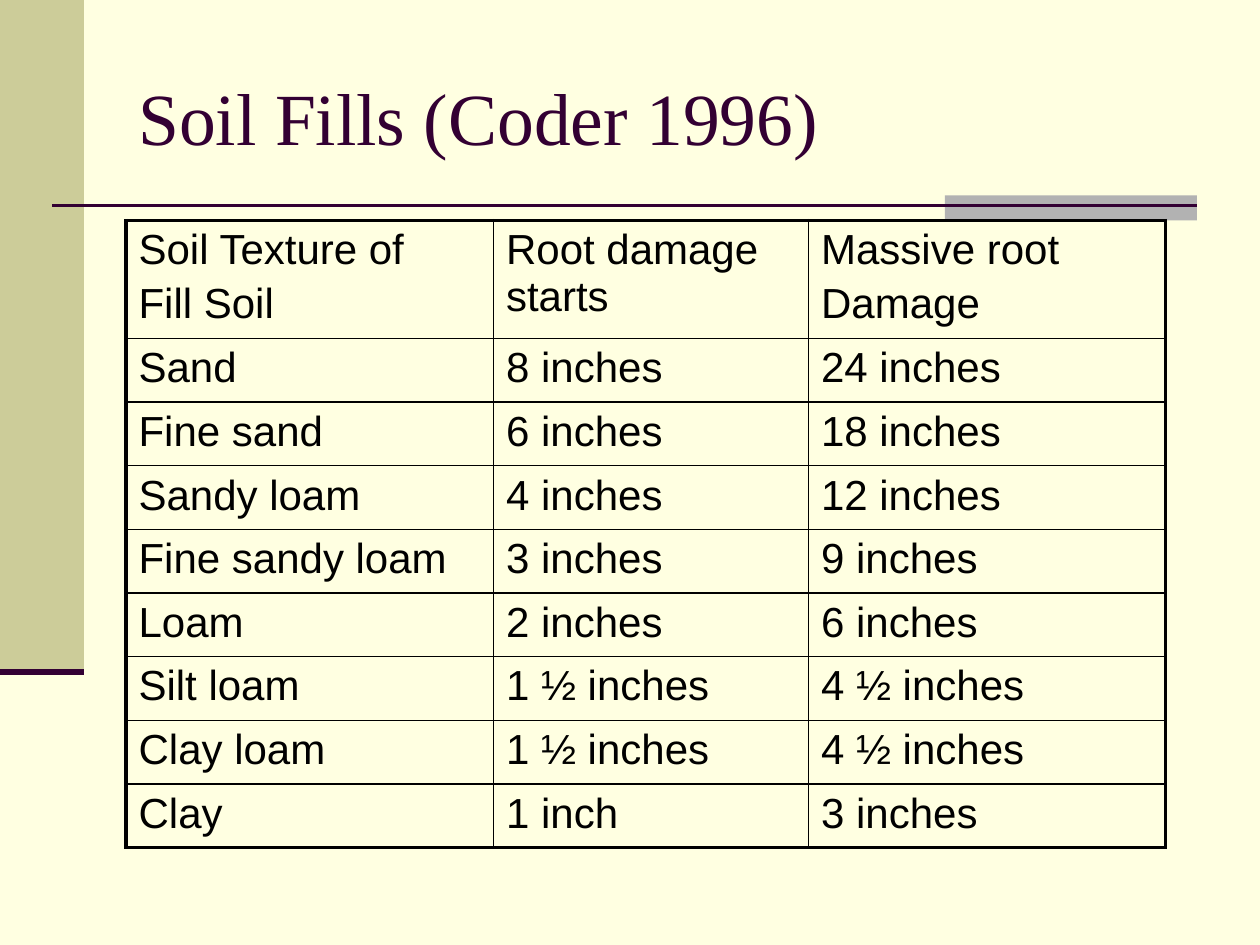
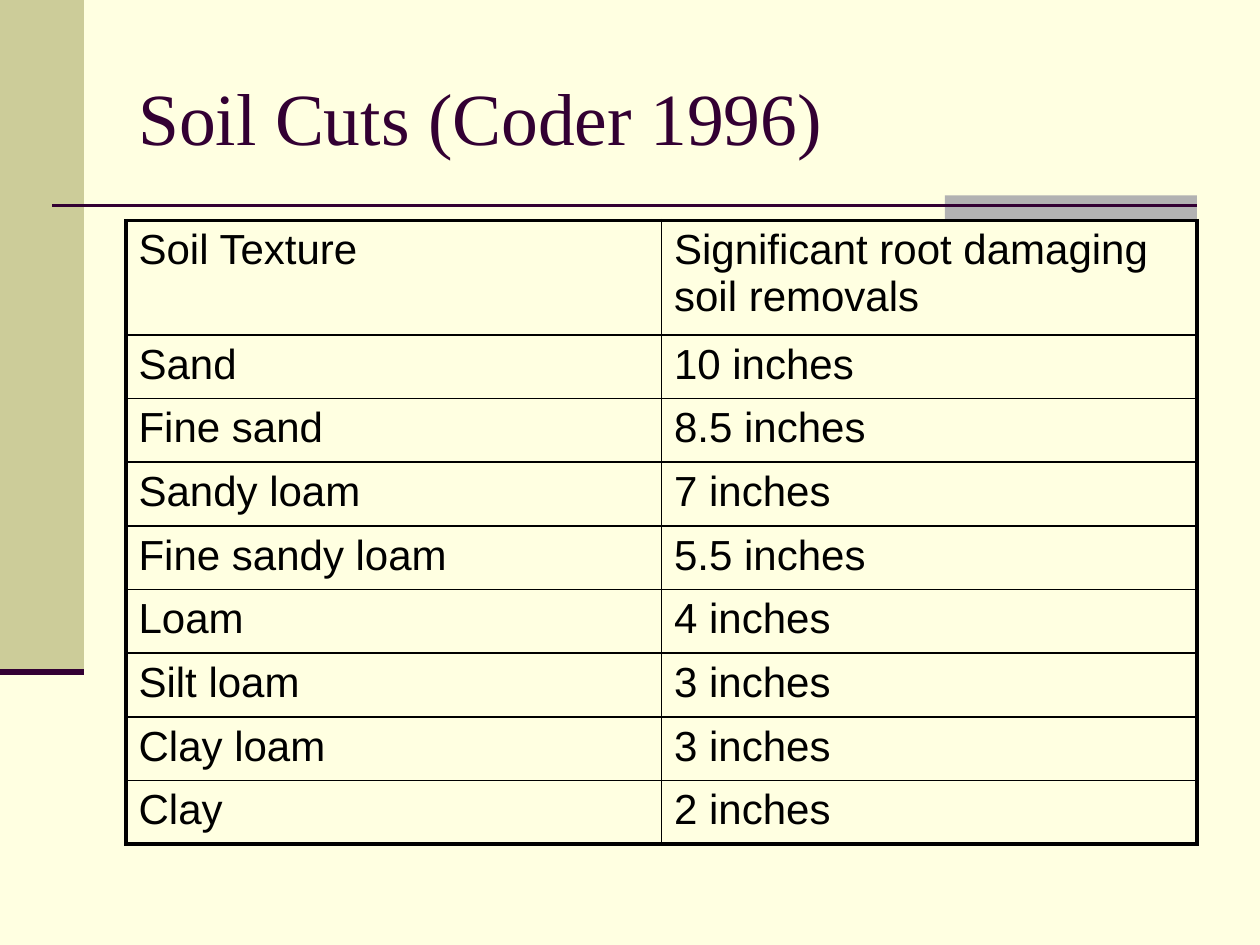
import dataclasses

import lxml.etree
import pptx
import pptx.dml.color
import pptx.enum.shapes
import pptx.enum.text
import pptx.oxml.ns
import pptx.util

COLUMNS, ROWS = 120, 90  # grid over the whole slide
UNIT = pptx.util.Inches(10) // COLUMNS


@dataclasses.dataclass(frozen=True)
class Theme:
    paper: str = "FFFFE1"
    band: str = "CCCC99"
    accent: str = "B2B2B2"
    plum: str = "330033"
    ink: str = "000000"
    title_font: str = "Times New Roman"
    title_size: float = 42
    table_font: str = "Arial"
    table_size: float = 24
    paragraph_gap: float = 4
    rule_width: float = 1.5
    band_foot_width: float = 3.5
    frame_width: float = 2.25
    grid_width: float = 1


@dataclasses.dataclass(frozen=True)
class Box:
    left: float
    top: float
    width: float
    height: float

    def emu(self):
        return [units(side) for side in dataclasses.astuple(self)]


THEME = Theme()
SLIDE = Box(0, 0, COLUMNS, ROWS)
TITLE = Box(12, 3.6, 102, 15)
HEADER_ROW = 10.9
TEXTURES = ["Sand", "Fine sand", "Sandy loam", "Fine sandy loam",
            "Loam", "Silt loam", "Clay loam", "Clay"]

FILLS_HEADER = ["Soil Texture of\nFill Soil", "Root damage starts",
                "Massive root\nDamage"]
FILLS_START = ["8 inches", "6 inches", "4 inches", "3 inches",
               "2 inches", "1 ½ inches", "1 ½ inches", "1 inch"]
FILLS_MASSIVE = ["24 inches", "18 inches", "12 inches", "9 inches",
                 "6 inches", "4 ½ inches", "4 ½ inches", "3 inches"]

CUTS_HEADER = ["Soil Texture", "Significant root damaging soil removals"]
CUTS_REMOVAL = ["10 inches", "8.5 inches", "7 inches", "5.5 inches",
                "4 inches", "3 inches", "3 inches", "2 inches"]


def units(count):
    return round(count * UNIT)


def rgb(color):
    return pptx.dml.color.RGBColor.from_string(color)


def style_text(paragraph, font_name, size, color):
    values = {"name": font_name, "size": pptx.util.Pt(size)}
    for attribute, value in values.items():
        setattr(paragraph.font, attribute, value)
    paragraph.font.color.rgb = rgb(color)


def add_block(slide, box, color):
    block = slide.shapes.add_shape(
        pptx.enum.shapes.MSO_SHAPE.RECTANGLE, *box.emu())
    block.shadow.inherit = False
    block.fill.solid()
    block.fill.fore_color.rgb = rgb(color)
    block.line.fill.background()


def add_rule(slide, left, right, row, width):
    rule = slide.shapes.add_connector(
        pptx.enum.shapes.MSO_CONNECTOR.STRAIGHT,
        units(left), units(row), units(right), units(row))
    rule.line.color.rgb = rgb(THEME.plum)
    rule.line.width = pptx.util.Pt(width)
    lxml.etree.SubElement(rule._element.spPr, pptx.oxml.ns.qn("a:effectLst"))


def add_frame(slide, box):
    """Draw the background, side band and title rule within the box."""
    slide.background.fill.solid()
    slide.background.fill.fore_color.rgb = rgb(THEME.paper)
    band = Box(box.left, box.top, box.width / 15, box.height * 32 / 45)
    right = box.left + box.width * 0.95
    accent_width = box.width / 5
    add_block(slide, band, THEME.band)
    add_block(slide, Box(right - accent_width, box.top + 18.6,
                         accent_width, 2.4), THEME.accent)
    add_rule(slide, box.left + 5, right, box.top + 19.6, THEME.rule_width)
    add_rule(slide, band.left, band.left + band.width,
             band.top + band.height, THEME.band_foot_width)


def add_title(slide, box, wording):
    title = slide.shapes.add_textbox(*box.emu()).text_frame
    title.word_wrap = True
    title.vertical_anchor = pptx.enum.text.MSO_ANCHOR.MIDDLE
    title.text = wording
    style_text(title.paragraphs[0], THEME.title_font, THEME.title_size, THEME.plum)


def set_borders(cell, outer_sides):
    """Give outer sides the frame width and the others the grid width."""
    properties = cell._tc.get_or_add_tcPr()
    for position, side in enumerate("LRTB"):
        width = THEME.frame_width if side in outer_sides else THEME.grid_width
        border = lxml.etree.Element(
            pptx.oxml.ns.qn(f"a:ln{side}"), w=str(pptx.util.Pt(width)))
        fill = lxml.etree.SubElement(border, pptx.oxml.ns.qn("a:solidFill"))
        lxml.etree.SubElement(fill, pptx.oxml.ns.qn("a:srgbClr"), val=THEME.ink)
        properties.insert(position, border)


def fill_cell(cell, wording, outer_sides):
    cell.fill.background()
    cell.margin_bottom = pptx.util.Inches(0.03)
    cell.text = wording
    for index, paragraph in enumerate(cell.text_frame.paragraphs):
        style_text(paragraph, THEME.table_font, THEME.table_size, THEME.ink)
        if index:
            paragraph.space_before = pptx.util.Pt(THEME.paragraph_gap)
    set_borders(cell, outer_sides)


def add_soil_table(slide, box, header, records, column_widths):
    lines = [header, *records]
    last_row, last_column = len(records), len(header) - 1
    table = slide.shapes.add_table(len(lines), len(header), *box.emu()).table
    table.first_row = table.horz_banding = False
    for column, width in zip(table.columns, column_widths):
        column.width = units(width)
    record_height = (box.height - HEADER_ROW) / len(records)
    for r, line in enumerate(lines):
        table.rows[r].height = units(record_height if r else HEADER_ROW)
        for c, wording in enumerate(line):
            edges = {"L": c == 0, "R": c == last_column,
                     "T": r == 0, "B": r == last_row}
            outer_sides = [side for side, is_outer in edges.items() if is_outer]
            fill_cell(table.cell(r, c), wording, outer_sides)


def add_soil_slide(deck, title, header, measures, column_widths):
    slide = deck.slides.add_slide(deck.slide_layouts[6])
    add_frame(slide, SLIDE)
    add_title(slide, TITLE, title)
    table_box = Box(TITLE.left, 21, sum(column_widths), 59.4)
    add_soil_table(slide, table_box, header,
                   list(zip(TEXTURES, *measures)), column_widths)


def main():
    deck = pptx.Presentation()
    deck.slide_width, deck.slide_height = units(COLUMNS), units(ROWS)
    add_soil_slide(deck, "Soil Fills (Coder 1996)", FILLS_HEADER,
                   [FILLS_START, FILLS_MASSIVE], [35, 30, 34])
    add_soil_slide(deck, "Soil Cuts (Coder 1996)", CUTS_HEADER,
                   [CUTS_REMOVAL], [51, 51])
    deck.save("out.pptx")


if __name__ == "__main__":
    main()
